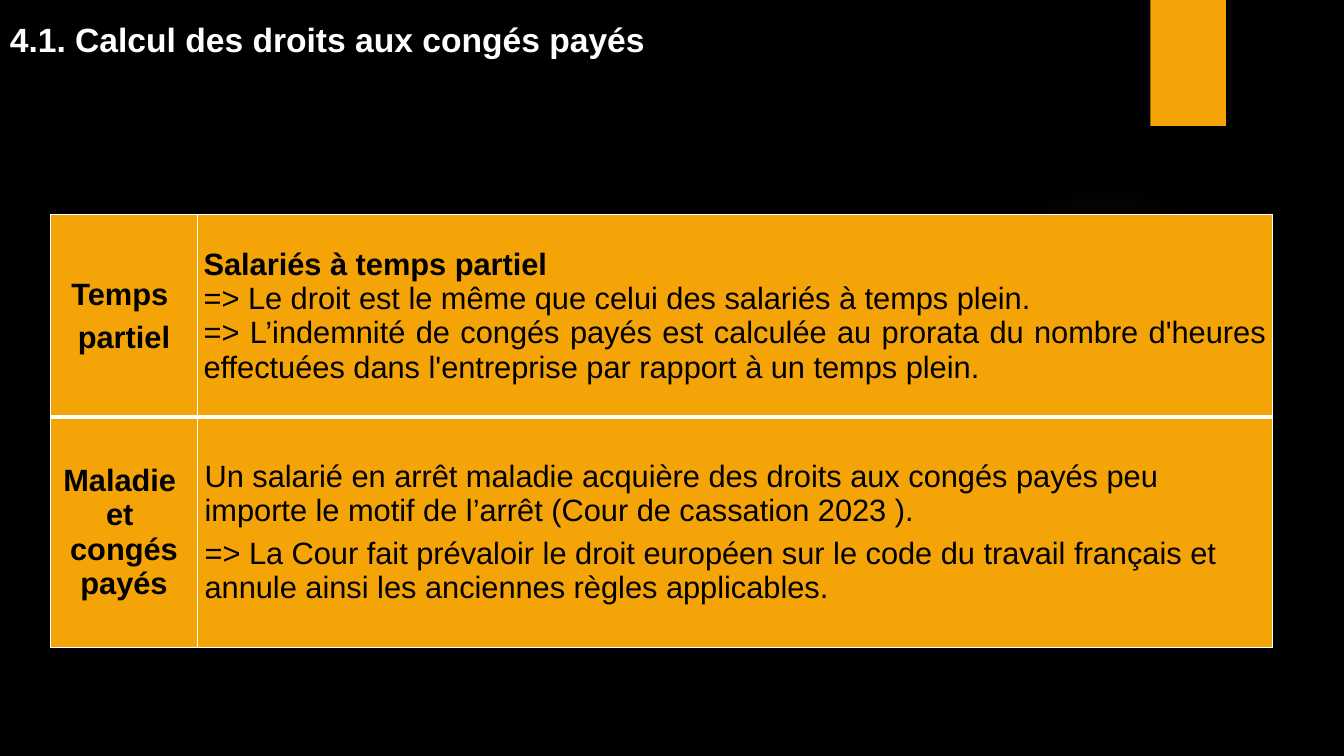
from dataclasses import dataclass

from lxml.etree import SubElement
from pptx import Presentation
from pptx.dml.color import RGBColor
from pptx.enum.shapes import MSO_SHAPE
from pptx.enum.text import MSO_ANCHOR, MSO_AUTO_SIZE, PP_ALIGN as Align
from pptx.oxml import parse_xml
from pptx.oxml.ns import nsdecls, qn
from pptx.util import Inches, Pt

COLORS = {"background": "000000", "amber": "F5A408", "glow": "FAC96A",
          "white": "FFFFFF", "black": "000000"}


@dataclass(frozen=True)
class Line:
    text: str
    bold: bool = False
    before: float = 0
    after: float = 0


@dataclass(frozen=True)
class CellContent:
    lines: tuple[Line, ...]
    align: Align
    margin: float


ROWS = (
    (CellContent((Line("Temps ", True), Line("partiel", True, before=6)),
                 Align.CENTER, 0.06),
     CellContent((
         Line("Salariés à temps partiel ", True),
         Line("=> Le droit est le même que celui des salariés à temps plein. "),
         Line("=> L’indemnité de congés payés est calculée au prorata du nombre "
              "d'heures effectuées dans l'entreprise par rapport à un temps plein."),
     ), Align.JUSTIFY, 0.06)),
    (CellContent((Line("Maladie ", True), Line("et ", True), Line("congés payés", True)),
                 Align.CENTER, 0.07),
     CellContent((
         Line("Un salarié en arrêt maladie acquière des droits aux congés payés peu "
              "importe le motif de l’arrêt (Cour de cassation 2023 )."),
         Line("=> La Cour fait prévaloir le droit européen sur le code du travail "
              "français et annule ainsi les anciennes règles applicables.",
              before=6, after=12),
     ), Align.LEFT, 0.07)),
)
COLUMN_WIDTHS = (1.46, 10.66)
ROW_HEIGHTS = (2.01, 2.28)


def color(name: str) -> RGBColor:
    return RGBColor.from_string(COLORS[name])


def write_lines(frame, lines: tuple[Line, ...], align: Align, size: float, ink: str) -> None:
    for index, line in enumerate(lines):
        paragraph = frame.paragraphs[0] if index == 0 else frame.add_paragraph()
        layout = {"alignment": align, "space_before": Pt(line.before),
                  "space_after": Pt(line.after)}
        for name, value in layout.items():
            setattr(paragraph, name, value)
        run = paragraph.add_run()
        run.text = line.text
        for name, value in {"name": "Arial", "size": Pt(size), "bold": line.bold}.items():
            setattr(run.font, name, value)
        run.font.color.rgb = color(ink)


def add_plain_shape(slide, kind: MSO_SHAPE, left: float, top: float,
                    width: float, height: float, fill: str):
    shape = slide.shapes.add_shape(kind, Inches(left), Inches(top),
                                   Inches(width), Inches(height))
    shape.shadow.inherit = False
    shape.line.fill.background()
    shape.fill.solid()
    shape.fill.fore_color.rgb = color(fill)
    return shape


def fade_radially(shape, fill: str, stops: tuple[tuple[int, int], ...]) -> None:
    """Swap the solid fill for a centred glow; stops are (position, opacity) percents."""
    stop_xml = "".join(
        f'<a:gs pos="{position * 1000}"><a:srgbClr val="{COLORS[fill]}">'
        f'<a:alpha val="{opacity * 1000}"/></a:srgbClr></a:gs>'
        for position, opacity in stops)
    gradient = parse_xml(
        f'<a:gradFill {nsdecls("a")}><a:gsLst>{stop_xml}</a:gsLst><a:path path="circle">'
        '<a:fillToRect l="50000" t="50000" r="50000" b="50000"/></a:path></a:gradFill>')
    properties = shape.element.spPr
    properties.replace(properties.find(qn("a:solidFill")), gradient)


def set_borders(cell, widths: dict[str, float]) -> None:
    properties = cell._tc.get_or_add_tcPr()
    for index, (side, width) in enumerate(widths.items()):
        border = SubElement(properties, qn(f"a:ln{side}"), w=str(Pt(width)))
        fill = SubElement(border, qn("a:solidFill"))
        SubElement(fill, qn("a:srgbClr"), val=COLORS["white"])
        properties.insert(index, border)


def fill_cell(cell, content: CellContent, borders: dict[str, float]) -> None:
    margin = Inches(content.margin)
    layout = {"vertical_anchor": MSO_ANCHOR.MIDDLE, "margin_left": margin,
              "margin_right": margin, "margin_top": 0, "margin_bottom": 0}
    for name, value in layout.items():
        setattr(cell, name, value)
    cell.fill.solid()
    cell.fill.fore_color.rgb = color("amber")
    set_borders(cell, borders)
    write_lines(cell.text_frame, content.lines, content.align, 22, "black")


def add_leave_table(slide) -> None:
    table = slide.shapes.add_table(
        len(ROWS), len(COLUMN_WIDTHS), Inches(0.5), Inches(2.13),
        Inches(sum(COLUMN_WIDTHS)), Inches(sum(ROW_HEIGHTS))).table
    table.first_row = table.horz_banding = False
    for column, width in zip(table.columns, COLUMN_WIDTHS):
        column.width = Inches(width)
    for row_index, contents in enumerate(ROWS):
        table.rows[row_index].height = Inches(ROW_HEIGHTS[row_index])
        # The rule between the rows is thicker than the outer frame
        borders = {"L": 1, "R": 1,
                   "T": 1 if row_index == 0 else 3,
                   "B": 1 if row_index == len(ROWS) - 1 else 3}
        for column_index, content in enumerate(contents):
            fill_cell(table.cell(row_index, column_index), content, borders)


def main() -> None:
    presentation = Presentation()
    presentation.slide_width = Inches(13.33)
    presentation.slide_height = Inches(7.5)
    slide = presentation.slides.add_slide(presentation.slide_layouts[6])
    slide.background.fill.solid()
    slide.background.fill.fore_color.rgb = color("background")

    # Backdrop: faint glow and top tab
    glow = add_plain_shape(slide, MSO_SHAPE.OVAL, 9.41, 1.83, 3.08, 3.08, "glow")
    fade_radially(glow, "glow", ((0, 7), (36, 6), (69, 0)))
    add_plain_shape(slide, MSO_SHAPE.RECTANGLE, 11.41, 0, 0.75, 1.25, "amber")

    # Title
    title = slide.shapes.add_textbox(0, Inches(0.14), Inches(6.56), Inches(0.5))
    title.text_frame.word_wrap = False
    title.text_frame.auto_size = MSO_AUTO_SIZE.SHAPE_TO_FIT_TEXT
    write_lines(title.text_frame,
                (Line("4.1. Calcul des droits aux congés payés", True, after=6),),
                Align.JUSTIFY, 24, "white")

    # Leave rules by situation
    add_leave_table(slide)

    presentation.save("out.pptx")


if __name__ == "__main__":
    main()
